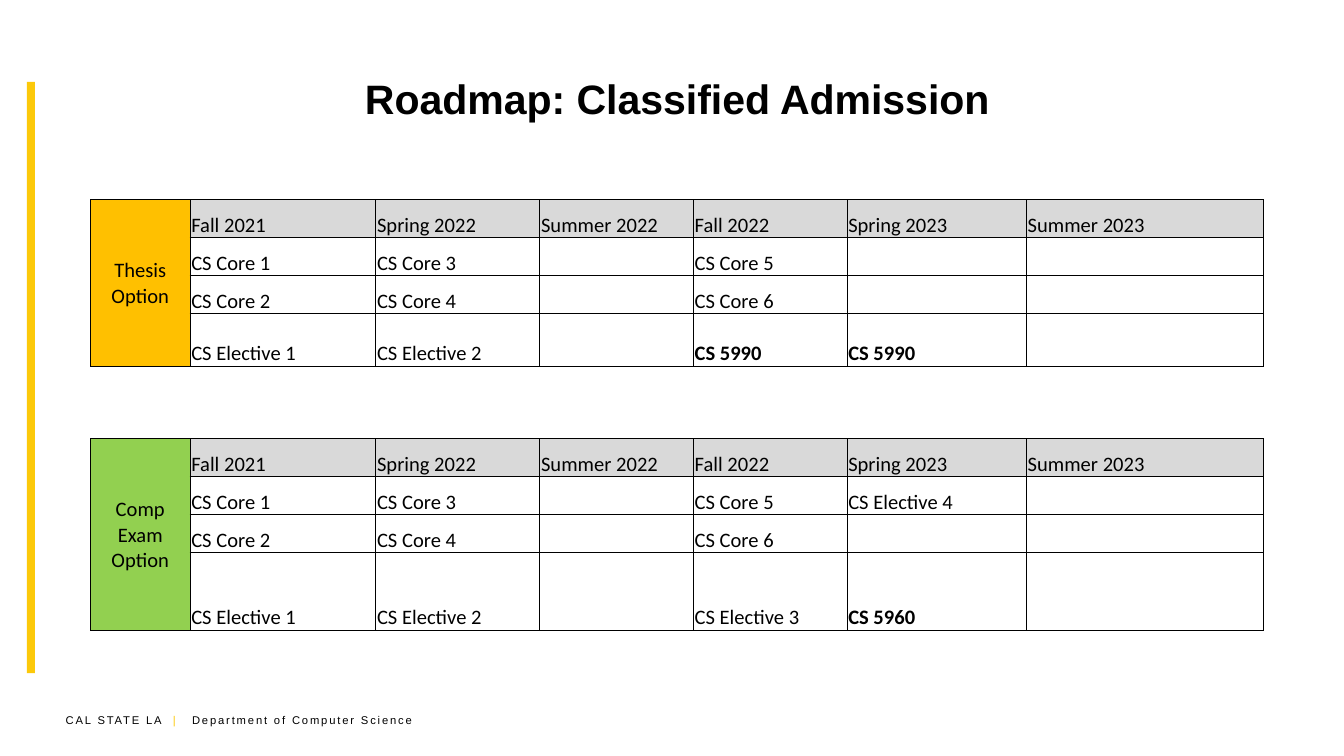
from pptx import Presentation
from pptx.dml.color import RGBColor
from pptx.enum.shapes import MSO_SHAPE as Shape
from pptx.enum.text import MSO_ANCHOR as Anchor, PP_ALIGN as Align
from pptx.oxml.ns import qn
from pptx.util import Pt
from lxml.etree import SubElement as Sub

BLACK, GOLD, GREY = "000000", "FCC90A", "D9D9D9"
COLS = [53.3, 99.5, 87.9, 82.3, 82.3, 96.1, 127.2]
ROW = 20.4
TERMS = [f"{term} {year}" for year in (2021, 2022, 2023)
         for term in ("Spring", "Summer", "Fall")][2:-1]
THESIS = [
    ["CS Core 1", "CS Core 3", "", "CS Core 5", "", ""],
    ["CS Core 2", "CS Core 4", "", "CS Core 6", "", ""],
    ["CS Elective 1", "CS Elective 2", "", "CS 5990", "CS 5990", ""],
]
EXAM = [
    ["CS Core 1", "CS Core 3", "", "CS Core 5", "CS Elective 4", ""],
    ["CS Core 2", "CS Core 4", "", "CS Core 6", "", ""],
    ["CS Elective 1", "CS Elective 2", "", "CS Elective 3", "CS 5960", ""],
]


def color(code):
    return RGBColor.from_string(code)


def write(para, text, font="Calibri", size=11, ink=BLACK, bold=False,
          align=Align.LEFT, space=0):
    """Add a run to the paragraph; space is the letter spacing in points."""
    para.alignment = align
    if not text:
        para.font.size = Pt(size)
        # An empty cell takes its height from the end mark.
        Sub(para._p, qn("a:endParaRPr"), sz=str(size * 100))
        return
    run = para.add_run()
    run.text = text
    face = run.font
    face.name, face.size, face.bold = font, Pt(size), bold
    face.color.rgb = color(ink)
    if space:
        face._element.set("spc", str(space * 100))


def add_title(slide, text):
    title = slide.shapes.title
    title.left, title.top = Pt(42.5), Pt(18.7)
    title.width, title.height = Pt(640.8), Pt(67.7)
    title.text_frame.vertical_anchor = Anchor.MIDDLE
    write(title.text_frame.paragraphs[0], text, font="Arial", size=22,
          bold=True, align=Align.CENTER)


def add_bar(slide):
    bar = slide.shapes.add_shape(Shape.RECTANGLE, Pt(14.4), Pt(43.9),
                                 Pt(4.3), Pt(316.8))
    bar.shadow.inherit = False
    bar.fill.solid()
    bar.fill.fore_color.rgb = color(GOLD)
    bar.line.fill.background()


def add_footer(slide):
    box = slide.shapes.add_textbox(Pt(28.1), Pt(378.7), Pt(210.2), Pt(14.4))
    box.text_frame.word_wrap = True
    para = box.text_frame.paragraphs[0]
    tabs = Sub(para._p.get_or_add_pPr(), qn("a:tabLst"))
    Sub(tabs, qn("a:tab"), pos=str(Pt(67.7)), algn="l")
    for text, ink in (("CAL STATE LA ", BLACK), (" |\t", GOLD),
                      ("Department of Computer Science", BLACK)):
        write(para, text, font="Arial", size=6, ink=ink, space=1)


def frame(cell):
    """Draw thin black lines on all four sides."""
    props = cell._tc.get_or_add_tcPr()
    for side in ("lnL", "lnR", "lnT", "lnB"):
        line = Sub(props, qn(f"a:{side}"), w=str(Pt(0.5)))
        Sub(Sub(line, qn("a:solidFill")), qn("a:srgbClr"), val=BLACK)


def format_cell(cell, fill, anchor):
    frame(cell)
    if fill:
        cell.fill.solid()
        cell.fill.fore_color.rgb = color(fill)
    else:
        cell.fill.background()
    cell.margin_left = cell.margin_right = cell.margin_top = Pt(0.7)
    cell.margin_bottom = 0
    cell.vertical_anchor = anchor


def add_plan(slide, top, name, fill, plan, last):
    """Add one option's table; last is the height of its bottom row."""
    rows = [TERMS] + plan
    highs = [ROW] * len(plan) + [last]
    table = slide.shapes.add_table(len(rows), len(COLS), Pt(48.5), Pt(top),
                                   Pt(sum(COLS)), Pt(sum(highs))).table
    table.first_row = table.horz_banding = False
    for col, width in zip(table.columns, COLS):
        col.width = Pt(width)
    for row, high in zip(table.rows, highs):
        row.height = Pt(high)
    for r, texts in enumerate(rows):
        format_cell(table.cell(r, 0), fill, Anchor.MIDDLE)
        for c, text in enumerate(texts, 1):
            cell = table.cell(r, c)
            format_cell(cell, None if r else GREY, Anchor.BOTTOM)
            write(cell.text_frame.paragraphs[0], text,
                  bold=text.startswith("CS 5"))
    head = table.cell(0, 0)
    head.merge(table.cell(len(plan), 0))
    write(head.text_frame.paragraphs[0], name, align=Align.CENTER)


def main():
    deck = Presentation()
    deck.slide_width, deck.slide_height = Pt(720), Pt(405)
    slide = deck.slides.add_slide(deck.slide_layouts[5])
    add_footer(slide)
    add_bar(slide)
    add_title(slide, "Roadmap: Classified Admission")
    add_plan(slide, 107, "Thesis Option", "FFC000", THESIS, 27.9)
    add_plan(slide, 235, "Comp Exam Option", "92D050", EXAM, 41.6)
    deck.save("out.pptx")


if __name__ == "__main__":
    main()
